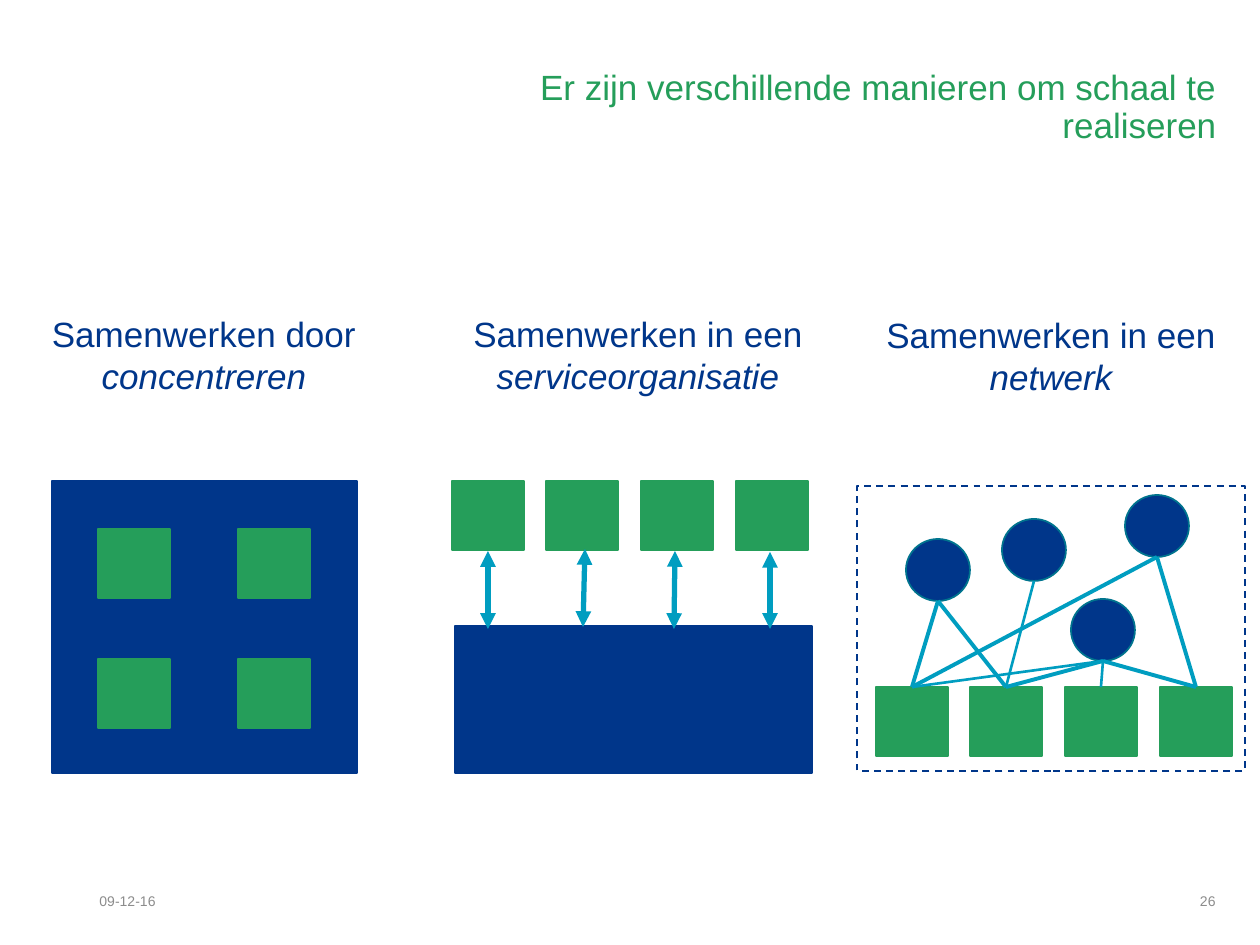
from dataclasses import dataclass

from lxml import etree
from pptx import Presentation
from pptx.dml.color import RGBColor
from pptx.enum.dml import MSO_LINE
from pptx.enum.shapes import MSO_CONNECTOR, MSO_SHAPE
from pptx.enum.text import MSO_ANCHOR, MSO_AUTO_SIZE, PP_ALIGN
from pptx.oxml.ns import qn
from pptx.util import Emu, Pt

RECT, OVAL = MSO_SHAPE.RECTANGLE, MSO_SHAPE.OVAL
STRAIGHT, DASH = MSO_CONNECTOR.STRAIGHT, MSO_LINE.DASH
LEFT, CENTER, RIGHT = PP_ALIGN.LEFT, PP_ALIGN.CENTER, PP_ALIGN.RIGHT
TOP, MIDDLE = MSO_ANCHOR.TOP, MSO_ANCHOR.MIDDLE

FONT = "Arial"
COLORS = {
    "green": "259E5A",
    "blue": "00368A",
    "teal": "00748E",
    "cyan": "009DC0",
    "gray": "8C8C8C",
}
EMU_PER_PX = 914400 / 126
SQUARE_W, SQUARE_H = 72, 69
CIRCLE_W, CIRCLE_H = 64, 62
ROW_OFFSETS = [round(i * 94.5) for i in range(4)]


@dataclass
class Box:
    x: int
    y: int
    w: int
    h: int

    def emu(self) -> list[Emu]:
        return [px(v) for v in (self.x, self.y, self.w, self.h)]

    def top(self) -> tuple[int, int]:
        return self.x + self.w // 2, self.y

    def bottom(self) -> tuple[int, int]:
        return self.x + self.w // 2, self.y + self.h


@dataclass
class Heading:
    box: Box
    lead: str
    emphasis: str


@dataclass
class Link:
    square: int
    circle: int
    width: float = 2.25


HEADINGS = [
    Heading(Box(15, 306, 378, 97), "Samenwerken door ", "concentreren"),
    Heading(Box(441, 306, 394, 97), "Samenwerken in een ", "serviceorganisatie"),
    Heading(Box(854, 307, 394, 97), "Samenwerken in een ", "netwerk"),
]
CONCENTRATION = Box(52, 481, 305, 292)
SERVICE = Box(455, 626, 357, 147)
NETWORK = Box(857, 486, 388, 285)

INNER_SQUARES = [Box(x, y, SQUARE_W, SQUARE_H) for y in (529, 659) for x in (98, 238)]
SERVICE_SQUARES = [Box(452 + dx, 481, SQUARE_W, SQUARE_H) for dx in ROW_OFFSETS]
NETWORK_SQUARES = [Box(876 + dx, 687, SQUARE_W, SQUARE_H) for dx in ROW_OFFSETS]
CIRCLES = [
    Box(x, y, CIRCLE_W, CIRCLE_H)
    for x, y in ((906, 539), (1002, 519), (1071, 599), (1125, 495))
]
LINKS = [
    Link(0, 0), Link(1, 0), Link(1, 1, 1.5),
    Link(3, 3), Link(0, 3), Link(3, 2),
    Link(2, 2, 1.5), Link(1, 2), Link(0, 2, 1.5),
]
ARROWS = [
    ((488, 629), (488, 551)),
    ((583, 627), (585, 549)),
    ((674, 629), (675, 551)),
    ((770, 629), (770, 552)),
]


def px(value: int) -> Emu:
    return Emu(round(value * EMU_PER_PX))


def rgb(name: str) -> RGBColor:
    return RGBColor.from_string(COLORS[name])


def style_text(p, size: float, color: str, align) -> None:
    p.alignment = align
    p.font.name = FONT
    p.font.size = Pt(size)
    p.font.color.rgb = rgb(color)


def add_title(s, box: Box, text: str) -> None:
    title = s.shapes.title
    title.left, title.top, title.width, title.height = box.emu()
    tf = title.text_frame
    tf.text = text
    tf.auto_size = MSO_AUTO_SIZE.NONE
    tf.vertical_anchor = TOP
    p = tf.paragraphs[0]
    p.line_spacing = 0.9
    style_text(p, 20, "green", RIGHT)


def add_text(s, box: Box, text: str, size: float, color: str, align, anchor):
    """Add a wrapped text box and return its paragraph."""
    tf = s.shapes.add_textbox(*box.emu()).text_frame
    tf.word_wrap = True
    tf.vertical_anchor = anchor
    p = tf.paragraphs[0]
    p.add_run().text = text
    style_text(p, size, color, align)
    return p


def add_heading(s, heading: Heading) -> None:
    p = add_text(s, heading.box, heading.lead, 20, "blue", CENTER, TOP)
    r = p.add_run()
    r.text = heading.emphasis
    r.font.italic = True


def add_box(s, kind, box: Box, fill: str | None, line: str):
    sp = s.shapes.add_shape(kind, *box.emu())
    sp.shadow.inherit = False
    if fill:
        sp.fill.solid()
        sp.fill.fore_color.rgb = rgb(fill)
    else:
        sp.fill.background()
    sp.line.color.rgb = rgb(line)
    sp.line.width = Pt(1)
    return sp


def add_line(s, start: tuple[int, int], end: tuple[int, int],
             width: float, arrows: bool = False) -> None:
    cxn = s.shapes.add_connector(STRAIGHT, *(px(v) for v in start + end))
    cxn.line.color.rgb = rgb("cyan")
    cxn.line.width = Pt(width)
    if arrows:
        ln = cxn.line._get_or_add_ln()
        for tag in ("a:headEnd", "a:tailEnd"):
            etree.SubElement(ln, qn(tag), type="triangle")
    etree.SubElement(cxn._element.spPr, qn("a:effectLst"))


def main() -> None:
    prs = Presentation()
    prs.slide_width, prs.slide_height = px(1260), px(945)
    s = prs.slides.add_slide(prs.slide_layouts[5])

    add_title(s, Box(430, 64, 799, 169),
              "Er zijn verschillende manieren om schaal te realiseren")
    add_text(s, Box(87, 876, 284, 50), "09-12-16", 8, "gray", LEFT, MIDDLE)
    add_text(s, Box(890, 876, 338, 50), "26", 8, "gray", RIGHT, MIDDLE)
    for heading in HEADINGS:
        add_heading(s, heading)

    for block in (CONCENTRATION, SERVICE):
        add_box(s, RECT, block, "blue", "blue")
    for square in INNER_SQUARES + SERVICE_SQUARES + NETWORK_SQUARES:
        add_box(s, RECT, square, "green", "green")
    for circle in CIRCLES:
        add_box(s, OVAL, circle, "blue", "teal")

    for link in LINKS:
        add_line(s, NETWORK_SQUARES[link.square].top(),
                 CIRCLES[link.circle].bottom(), link.width)
    add_box(s, RECT, NETWORK, None, "blue").line.dash_style = DASH
    for start, end in ARROWS:
        add_line(s, start, end, 3, arrows=True)

    prs.save("out.pptx")


if __name__ == "__main__":
    main()
